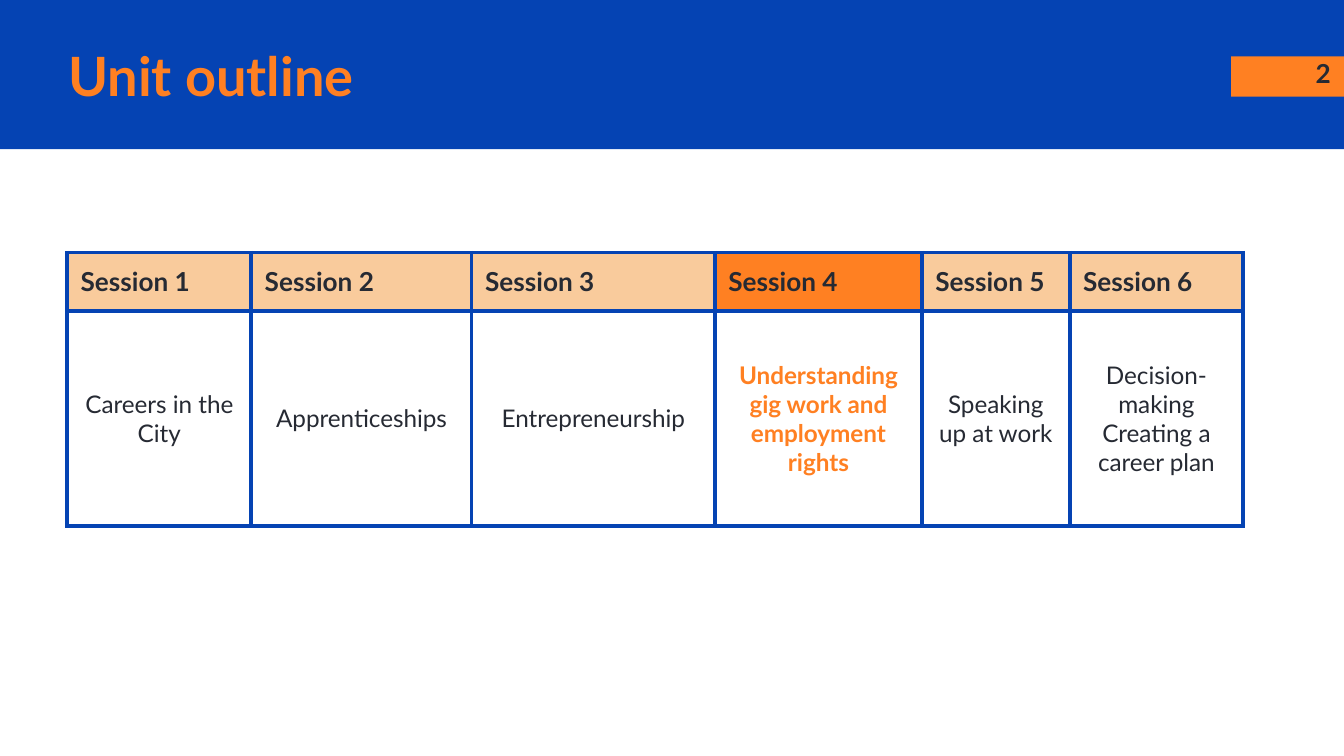
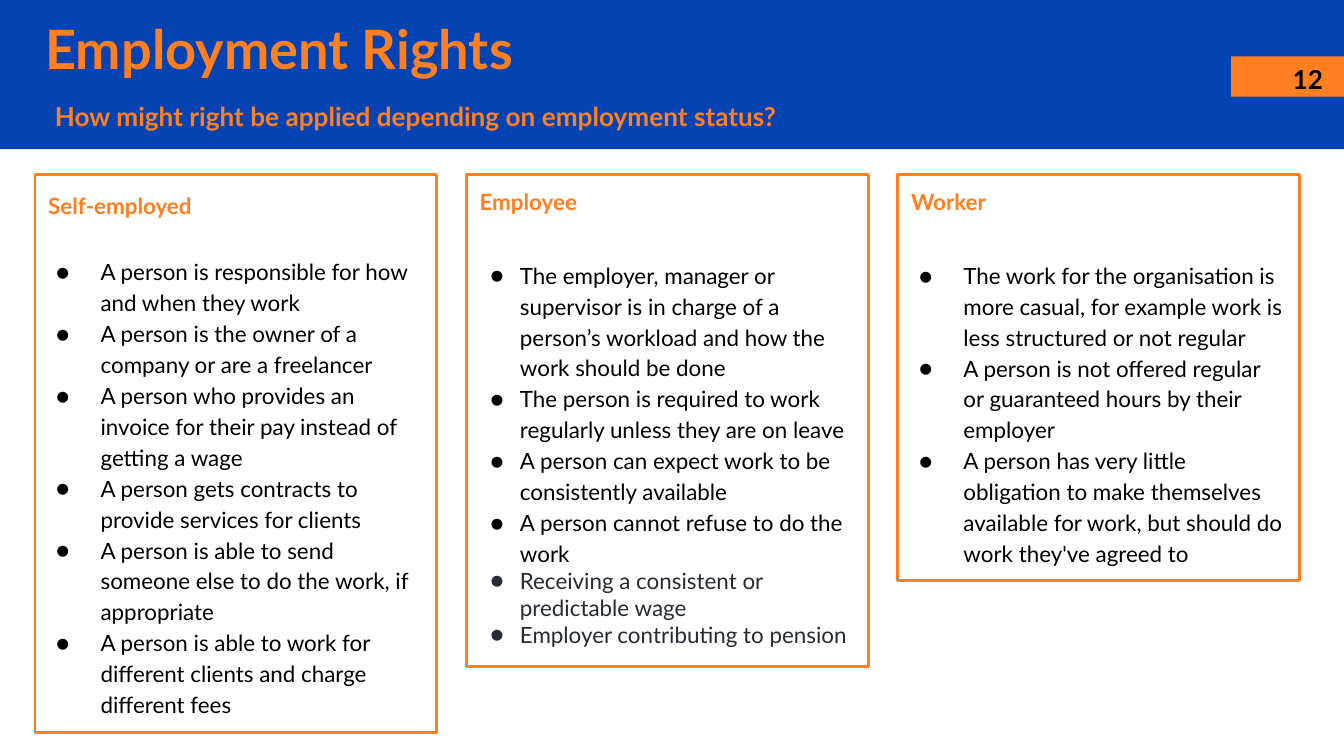
from dataclasses import dataclass

from lxml import etree
from pptx import Presentation
from pptx.dml.color import RGBColor
from pptx.enum.shapes import MSO_SHAPE
from pptx.enum.text import MSO_ANCHOR, PP_ALIGN
from pptx.oxml.ns import qn
from pptx.util import Inches, Pt

RECTANGLE = MSO_SHAPE.RECTANGLE
TOP, MIDDLE = MSO_ANCHOR.TOP, MSO_ANCHOR.MIDDLE
LEFT, CENTER, RIGHT = PP_ALIGN.LEFT, PP_ALIGN.CENTER, PP_ALIGN.RIGHT


@dataclass(frozen=True)
class Theme:
    font: str = "Lato"
    blue: str = "0543B3"
    orange: str = "FF8022"
    peach: str = "F9CB9C"
    ink: str = "262A33"
    black: str = "000000"
    white: str = "FFFFFF"
    title: int = 29
    label: int = 14
    cell: int = 13
    body: int = 12
    border: float = 2.25
    outline: float = 1.5
    inset: float = 0.1


THEME = Theme()

SESSIONS = [
    ("Session 1", ["Careers in the City"], 1.37),
    ("Session 2", ["Apprenticeships"], 1.64),
    ("Session 3", ["Entrepreneurship"], 1.81),
    ("Session 4", ["Understanding gig work and employment rights"], 1.54),
    ("Session 5", ["Speaking up at work"], 1.1),
    ("Session 6", ["Decision- making", "Creating a career plan"], 1.29),
]
CURRENT_SESSION = "Session 4"

WIDE_INDENT = (0.39, -0.33)
NARROW_INDENT = (0.3, -0.22)

SELF_EMPLOYED = [
    "A person is responsible for how and when they work",
    "A person is the owner of a company or are a freelancer",
    "A person who provides an invoice for their pay instead of getting a wage",
    "A person gets contracts to provide services for clients",
    "A person is able to send someone else to do the work, if appropriate",
    "A person is able to work for different clients and charge different fees",
]
EMPLOYEE = [
    "The employer, manager or supervisor is in charge of a person’s workload "
    "and how the work should be done",
    "The person is required to work regularly unless they are on leave",
    "A person can expect work to be consistently available",
    "A person cannot refuse to do the work",
]
EMPLOYEE_BENEFITS = [
    "Receiving a consistent or predictable wage",
    "Employer contributing to pension",
]
WORKER = [
    "The work for the organisation is more casual, for example work is less "
    "structured or not regular",
    "A person is not offered regular or guaranteed hours by their employer",
    "A person has very little obligation to make themselves available for work, "
    "but should do work they've agreed to",
]


def apply_format(target, values):
    for name, value in values.items():
        setattr(target, name, value)


def place(left, top, width, height):
    return [Inches(length) for length in (left, top, width, height)]


def set_layout(holder, anchor=TOP):
    """Set the margins and anchor of a text frame or a table cell."""
    inset = Inches(THEME.inset)
    apply_format(holder, {
        "word_wrap": True, "vertical_anchor": anchor,
        "margin_left": inset, "margin_right": inset,
        "margin_top": inset, "margin_bottom": inset,
    } if hasattr(holder, "word_wrap") else {
        "vertical_anchor": anchor,
        "margin_left": inset, "margin_right": inset,
        "margin_top": inset, "margin_bottom": inset,
    })


def write(paragraph, text, size, color, bold=False, **layout):
    """Fill a paragraph; layout holds paragraph attributes such as alignment."""
    apply_format(paragraph, {"alignment": LEFT, **layout})
    run = paragraph.add_run()
    run.text = text
    apply_format(run.font, {"name": THEME.font, "size": Pt(size), "bold": bold})
    run.font.color.rgb = RGBColor.from_string(color)


def add_bullet(paragraph, color, indent):
    properties = paragraph._p.get_or_add_pPr()
    for name, length in zip(("marL", "indent"), indent):
        properties.set(name, str(Inches(length)))
    bullet_color = etree.SubElement(properties, qn("a:buClr"))
    etree.SubElement(bullet_color, qn("a:srgbClr"), val=color)
    etree.SubElement(properties, qn("a:buFont"), typeface=THEME.font)
    etree.SubElement(properties, qn("a:buChar"), char="●")


def add_label(slide, box, text, size, color, anchor=TOP, align=LEFT):
    frame = slide.shapes.add_textbox(*place(*box)).text_frame
    set_layout(frame, anchor)
    write(frame.paragraphs[0], text, size, color, True, alignment=align)


def add_block(slide, box, fill=None, outline=None):
    block = slide.shapes.add_shape(RECTANGLE, *place(*box))
    block.shadow.inherit = False
    if fill:
        block.fill.solid()
        block.fill.fore_color.rgb = RGBColor.from_string(fill)
    else:
        block.fill.background()
    if outline:
        block.line.color.rgb = RGBColor.from_string(outline)
        block.line.width = Pt(THEME.outline)
    else:
        block.line.fill.background()
    return block


def add_titled_slide(deck, title, left, top):
    """Start a slide with the header band, the page tab and the title."""
    slide = deck.slides.add_slide(deck.slide_layouts[6])
    add_block(slide, (0, 0, 10, 1.11), THEME.blue)
    add_block(slide, (9.16, 0.42, 0.84, 0.3), THEME.orange)
    add_label(slide, (left, top, 8.46, 0.56), title, THEME.title,
              THEME.orange, MIDDLE)
    return slide


def add_borders(cell):
    properties = cell._tc.get_or_add_tcPr()
    for side in ("lnL", "lnR", "lnT", "lnB"):
        line = etree.SubElement(properties, qn(f"a:{side}"),
                                w=str(Pt(THEME.border)))
        fill = etree.SubElement(line, qn("a:solidFill"))
        etree.SubElement(fill, qn("a:srgbClr"), val=THEME.blue)


def fill_cell(cell, lines, fill, anchor, size, color, bold, align):
    add_borders(cell)
    cell.fill.solid()
    cell.fill.fore_color.rgb = RGBColor.from_string(fill)
    set_layout(cell, anchor)
    frame = cell.text_frame
    for index, line in enumerate(lines):
        paragraph = frame.add_paragraph() if index else frame.paragraphs[0]
        write(paragraph, line, size, color, bold, alignment=align)


def add_session_table(slide):
    row_heights = (0.43, 1.6)
    total_width = sum(width for _, _, width in SESSIONS)
    table = slide.shapes.add_table(
        len(row_heights), len(SESSIONS),
        *place(0.5, 1.88, total_width, sum(row_heights))).table
    apply_format(table, {"first_row": False, "horz_banding": False})
    for row, height in zip(table.rows, row_heights):
        row.height = Inches(height)
    for column, (session, topic, width) in enumerate(SESSIONS):
        table.columns[column].width = Inches(width)
        current = session == CURRENT_SESSION
        fill_cell(table.cell(0, column), [session],
                  THEME.orange if current else THEME.peach,
                  TOP, THEME.label, THEME.ink, True, LEFT)
        fill_cell(table.cell(1, column), topic, THEME.white, MIDDLE, THEME.cell,
                  THEME.orange if current else THEME.ink, current, CENTER)


def add_status_card(slide, column, height, status, rights, indent, gap,
                    heading_spacing=1.0, benefits=()):
    """Outline a status; benefits follow the rights, set tighter and in ink."""
    card = add_block(slide, (0.26 + 3.21 * column, 1.3, 2.99, height),
                     outline=THEME.orange)
    frame = card.text_frame
    set_layout(frame)
    write(frame.paragraphs[0], status, THEME.body, THEME.orange, True,
          line_spacing=heading_spacing)
    items = [(right, THEME.black, 1.15) for right in rights]
    items += [(benefit, THEME.ink, 1.0) for benefit in benefits]
    for index, (text, color, spacing) in enumerate(items):
        paragraph = frame.add_paragraph()
        add_bullet(paragraph, color, indent)
        write(paragraph, text, THEME.body, color, line_spacing=spacing,
              space_before=Pt(0 if index else gap))


def build_outline(deck):
    slide = add_titled_slide(deck, "Unit outline", 0.41, 0.28)
    add_label(slide, (9.4, 0.33, 0.6, 0.43), "2", THEME.label, THEME.ink,
              align=RIGHT)
    add_session_table(slide)


def build_rights(deck):
    slide = add_titled_slide(deck, "Employment Rights", 0.24, 0.08)
    add_label(slide, (0.31, 0.65, 6.72, 0.44),
              "How might right be applied depending on employment status?",
              THEME.label, THEME.orange)
    add_status_card(slide, 0, 4.15, "Self-employed", SELF_EMPLOYED,
                    WIDE_INDENT, 19, heading_spacing=1.15)
    add_status_card(slide, 1, 3.66, "Employee", EMPLOYEE, NARROW_INDENT, 23,
                    benefits=EMPLOYEE_BENEFITS)
    add_status_card(slide, 2, 3.02, "Worker", WORKER, WIDE_INDENT, 23)
    add_label(slide, (9.52, 0.37, 0.48, 0.28), "12", THEME.label, THEME.black)


def main():
    deck = Presentation()
    deck.slide_width = Inches(10)
    deck.slide_height = Inches(10) * 9 // 16
    build_outline(deck)
    build_rights(deck)
    deck.save("out.pptx")


if __name__ == "__main__":
    main()
